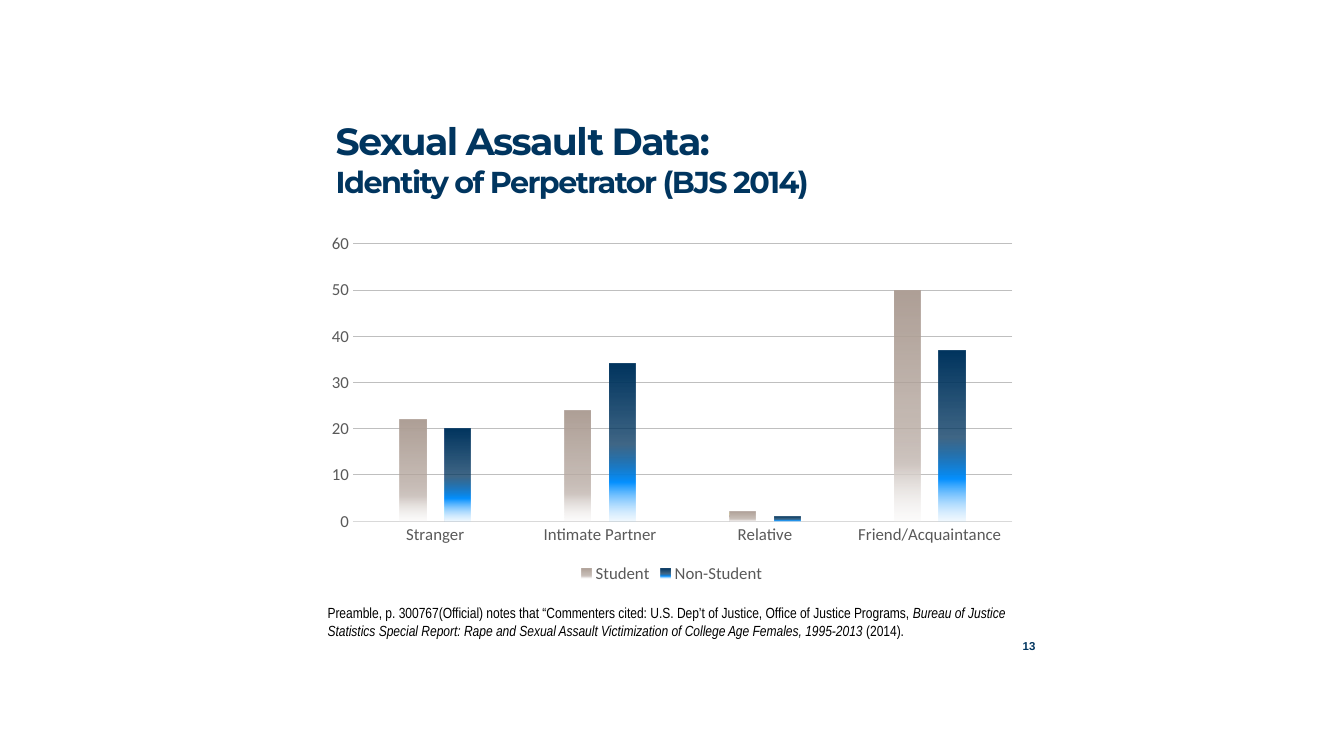
"""Build the slide on the identity of perpetrators, with a clustered column chart."""
from lxml import etree
from pptx import Presentation
from pptx.chart.data import CategoryChartData
from pptx.dml.color import RGBColor
from pptx.enum import chart as ch, text as tx
from pptx.oxml.ns import qn
from pptx.util import Inches, Pt

COLORS = {"navy": "00355F", "black": "000000", "label": "595959", "axis": "D9D9D9", "grid": "BFBFBF"}
TITLE = [("Sexual Assault Data:", 27), ("Identity of Perpetrator (BJS 2014)", 21.6)]
CATEGORIES = ["Stranger", "Intimate Partner", "Relative", "Friend/Acquaintance"]
SERIES = [
    ("Student", (22, 24, 2, 50),
     [(0, "AFA097", 100), (51, "AFA097", 75), (75, "CFC6C1", 100), (100, "EFECEA", 15)]),
    ("Non-Student", (20, 34, 1, 37),
     [(0, "00355F", 100), (51, "00355F", 75), (75, "0691FF", 100), (100, "ACDAFF", 15)]),
]
SOURCE_NOTE = [
    ("Preamble, p. 300767(Official) notes that “Commenters cited: U.S. Dep’t of Justice, "
     "Office of Justice Programs, ", False),
    ("Bureau of Justice Statistics Special Report: Rape and Sexual Assault Victimization "
     "of College Age Females, 1995-2013", True),
    (" (2014).", False),
]
PAGE_NUMBER = "13"
PLACES = {
    "title": (3.23, 1, 5.82, 1.15),
    "chart": (3.15, 2.25, 7.03, 3.58),
    "note": (3.15, 5.94, 7.19, 0.45),
    "page": (9.98, 6.26, 0.36, 0.3),
}


def place(name):
    return [Inches(length) for length in PLACES[name]]


def color(name):
    return RGBColor.from_string(COLORS[name])


def set_all(target, **values):
    for name, value in values.items():
        setattr(target, name, value)


def format_font(font, name, size, color_name, **values):
    set_all(font, name=name, size=Pt(size), **values)
    font.color.rgb = color(color_name)


def format_line(line, color_name):
    line.width = Pt(0.75)
    line.color.rgb = color(color_name)


def fill_gradient(series, stops):
    properties = series.format.fill._xPr
    gradient = etree.SubElement(properties, qn("a:gradFill"), rotWithShape="1")
    stop_list = etree.SubElement(gradient, qn("a:gsLst"))
    for position, hex_color, opacity in stops:
        stop = etree.SubElement(stop_list, qn("a:gs"), pos=str(position * 1000))
        stop_color = etree.SubElement(stop, qn("a:srgbClr"), val=hex_color)
        if opacity < 100:
            etree.SubElement(stop_color, qn("a:alpha"), val=str(opacity * 1000))
    etree.SubElement(gradient, qn("a:lin"), ang="5400000", scaled="0")


def add_title(slide):
    title = slide.shapes.title
    set_all(title, **dict(zip(("left", "top", "width", "height"), place("title"))))
    set_all(title.text_frame, word_wrap=True, auto_size=tx.MSO_AUTO_SIZE.NONE,
            vertical_anchor=tx.MSO_ANCHOR.MIDDLE)
    paragraph = title.text_frame.paragraphs[0]
    paragraph.alignment = tx.PP_ALIGN.LEFT
    for index, (line, size) in enumerate(TITLE):
        if index:
            paragraph.add_line_break()
        run = paragraph.add_run()
        run.text = line
        format_font(run.font, "Montserrat", size, "navy", bold=True)
        run.font._element.set("spc", "-110")


def add_chart(slide):
    data = CategoryChartData()
    data.categories = CATEGORIES
    for name, values, _ in SERIES:
        data.add_series(name, values)
    chart = slide.shapes.add_chart(ch.XL_CHART_TYPE.COLUMN_CLUSTERED, *place("chart"), data).chart
    set_all(chart, has_title=False, has_legend=True)
    format_font(chart.font, "Calibri", 10, "black")
    set_all(chart.legend, position=ch.XL_LEGEND_POSITION.BOTTOM, include_in_layout=False)
    format_font(chart.legend.font, "Calibri", 12, "label")

    plot = chart.plots[0]
    set_all(plot, gap_width=355, overlap=-70, vary_by_categories=False)
    for series, (_, _, stops) in zip(plot.series, SERIES):
        series.invert_if_negative = False
        fill_gradient(series, stops)

    for axis in (chart.category_axis, chart.value_axis):
        set_all(axis, major_tick_mark=ch.XL_TICK_MARK.NONE, minor_tick_mark=ch.XL_TICK_MARK.NONE)
        format_font(axis.tick_labels.font, "Calibri", 12, "label")
    format_line(chart.category_axis.format.line, "axis")
    set_all(chart.value_axis, minimum_scale=0, maximum_scale=60, major_unit=10,
            has_major_gridlines=True)
    chart.value_axis.format.line.fill.background()
    format_line(chart.value_axis.major_gridlines.format.line, "grid")


def add_text(slide, name, runs, font, size, color_name, bold=False):
    frame = slide.shapes.add_textbox(*place(name)).text_frame
    frame.word_wrap = True
    for words, italic in runs:
        run = frame.paragraphs[0].add_run()
        run.text = words
        format_font(run.font, font, size, color_name, bold=bold, italic=italic)
    return frame


def main():
    presentation = Presentation()
    set_all(presentation, slide_width=Inches(13.33), slide_height=Inches(7.5))
    slide = presentation.slides.add_slide(presentation.slide_layouts[5])
    add_text(slide, "note", SOURCE_NOTE, "Arial Narrow", 10.5, "black")
    add_chart(slide)
    add_title(slide)
    page = add_text(slide, "page", [(PAGE_NUMBER, False)], "Arial", 8.2, "navy", bold=True)
    set_all(page, vertical_anchor=tx.MSO_ANCHOR.MIDDLE, margin_left=Inches(0.07),
            margin_right=Inches(0.07), margin_top=Inches(0.04), margin_bottom=Inches(0.04))
    page.paragraphs[0].alignment = tx.PP_ALIGN.RIGHT
    presentation.save("out.pptx")


if __name__ == "__main__":
    main()
